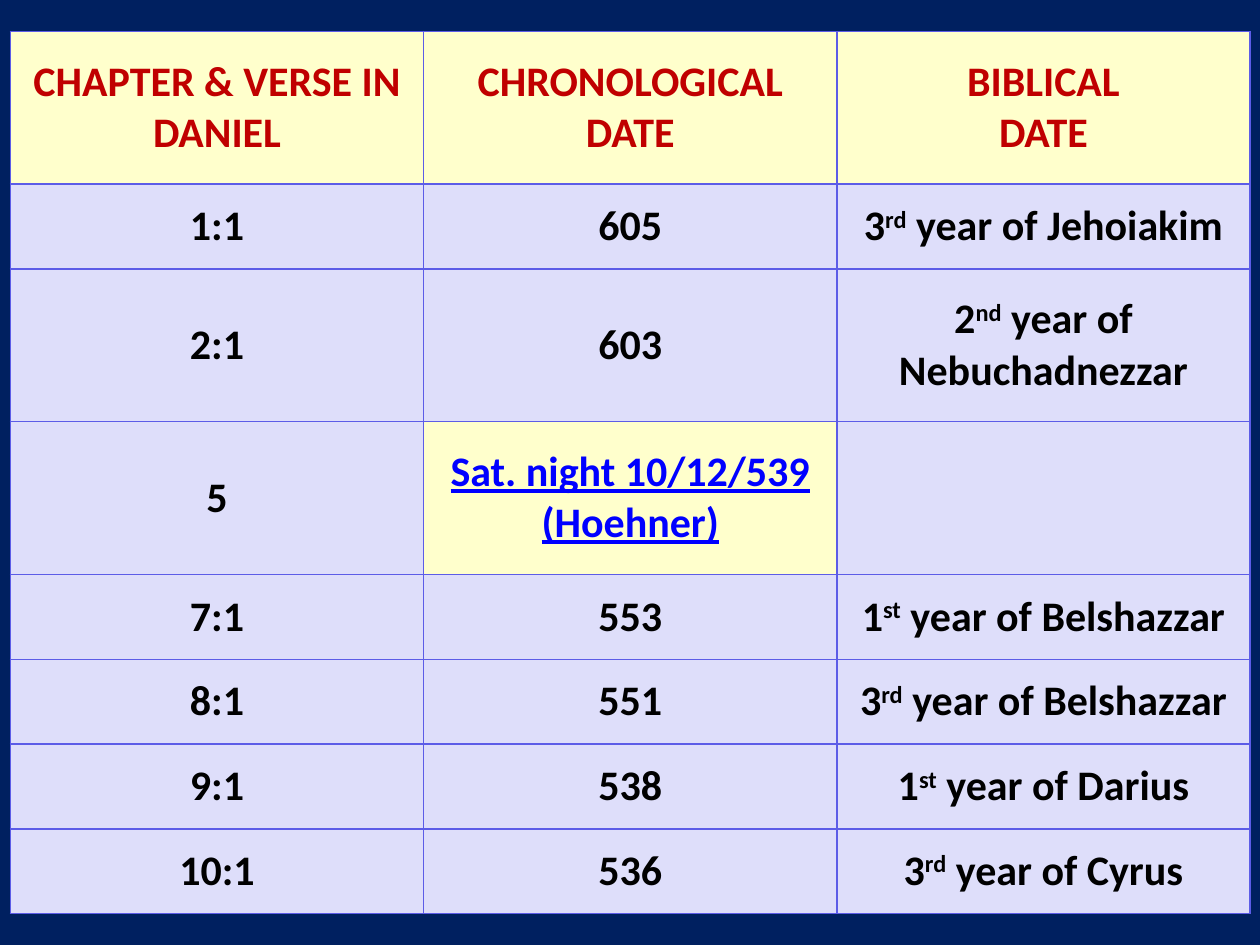
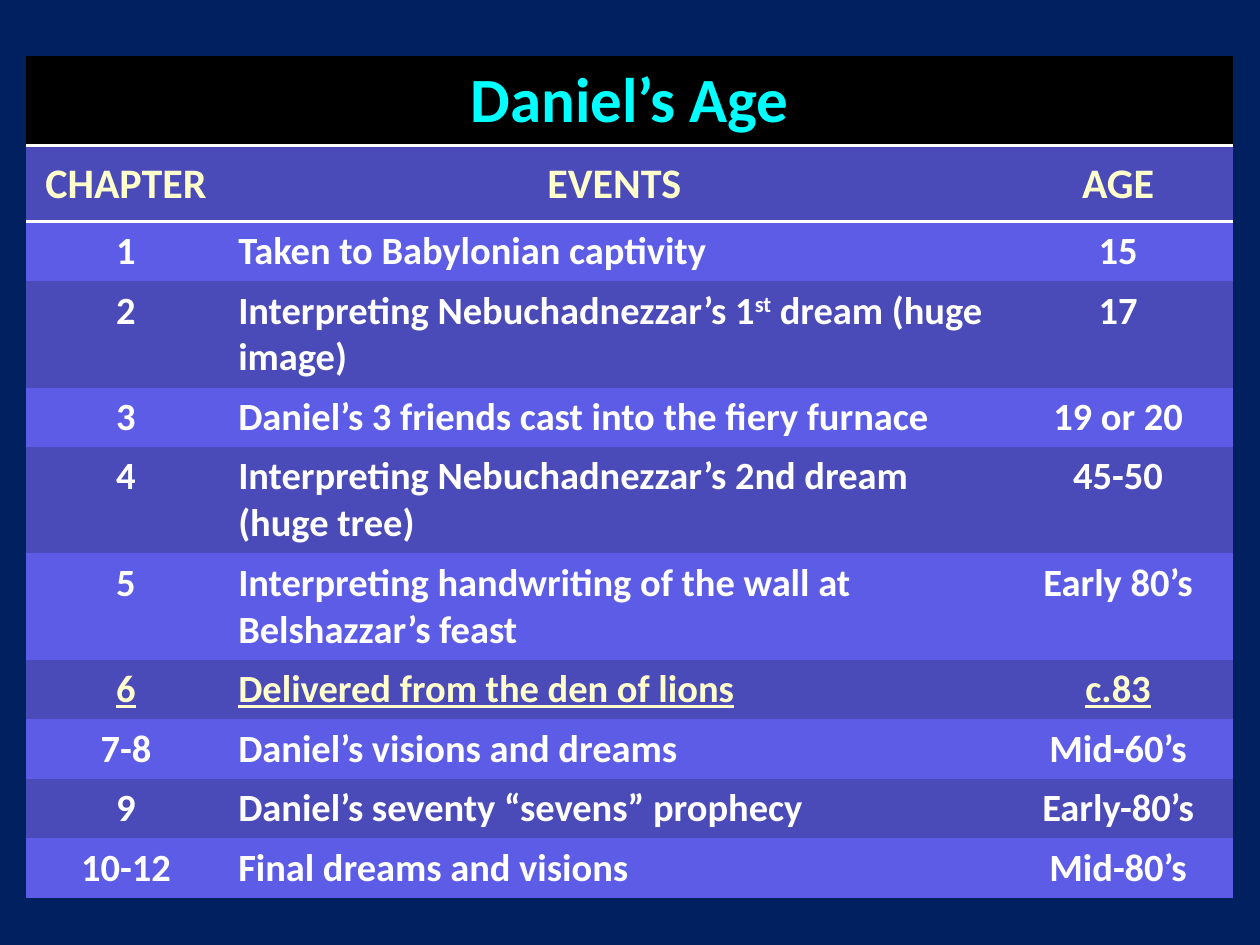
from lxml import etree
from pptx import Presentation
from pptx.dml.color import RGBColor
from pptx.enum import text
from pptx.oxml import ns
from pptx.util import Cm, Pt

HUES = {
    "navy": "002060", "cream": "FFFFCC", "red": "C00000", "pale": "DEDEFA",
    "violet": "5C5CE7", "indigo": "4A4AB9", "blue": "0000FF",
    "cyan": "00FFFF", "black": "000000", "white": "FFFFFF",
}
FONT = "Calibri"
PLAIN = "{2D5ABB26-0587-4C30-8999-92F81FD0307C}"
MID = text.MSO_ANCHOR.MIDDLE
TOP = text.MSO_ANCHOR.TOP

DATES = [
    ("1:1", "605", "3^rd^ year of Jehoiakim"),
    ("2:1", "603", "2^nd^ year of Nebuchadnezzar"),
    ("5", "Sat. night 10/12/539 (Hoehner)", ""),
    ("7:1", "553", "1^st^ year of Belshazzar"),
    ("8:1", "551", "3^rd^ year of Belshazzar"),
    ("9:1", "538", "1^st^ year of Darius"),
    ("10:1", "536", "3^rd^ year of Cyrus"),
]
AGES = [
    ("1", "Taken to Babylonian captivity", "15"),
    ("2", "Interpreting Nebuchadnezzar’s 1^st^ dream (huge image)", "17"),
    ("3", "Daniel’s 3 friends cast into the fiery furnace", "19 or 20"),
    ("4", "Interpreting Nebuchadnezzar’s 2nd dream (huge tree)", "45-50"),
    ("5", "Interpreting handwriting of the wall at Belshazzar’s feast", "Early 80’s"),
    ("6", "Delivered from the den of lions", "c.83"),
    ("7-8", "Daniel’s visions and dreams", "Mid-60’s"),
    ("9", "Daniel’s seventy “sevens” prophecy", "Early-80’s"),
    ("10-12", "Final dreams and visions", "Mid-80’s"),
]


def hue(name):
    return RGBColor.from_string(HUES[name])


def add_page(deck):
    page = deck.slides.add_slide(deck.slide_layouts[6])
    fill = page.background.fill
    fill.solid()
    fill.fore_color.rgb = hue("navy")
    return page


def add_grid(page, left, top, cols, rows):
    frame = page.shapes.add_table(len(rows), len(cols), Cm(left), Cm(top),
                                  Cm(sum(cols)), Cm(sum(rows)))
    grid = frame.table
    grid.first_row = grid.horz_banding = False
    grid._tbl.tblPr.find(ns.qn("a:tableStyleId")).text = PLAIN
    for col, width in zip(grid.columns, cols):
        col.width = Cm(width)
    for row, height in zip(grid.rows, rows):
        row.height = Cm(height)
    return grid


def fill_cell(cell, words, back, ink, size, anchor=TOP, center=True,
              under=False, before=0):
    cell.fill.solid()
    cell.fill.fore_color.rgb = hue(back)
    cell.vertical_anchor = anchor
    frame = cell.text_frame
    for i, line in enumerate(words.split("\n")):
        para = frame.add_paragraph() if i else frame.paragraphs[0]
        para.alignment = text.PP_ALIGN.CENTER if center else text.PP_ALIGN.LEFT
        para.space_before = Pt(before)
        para.font.size = Pt(size)
        for j, part in enumerate(line.split("^")):
            if part:
                add_run(para, part, ink, size, under, raised=j % 2)


def add_run(para, words, ink, size, under, raised):
    run = para.add_run()
    run.text = words
    font = run.font
    font.name, font.size, font.bold = FONT, Pt(size), True
    font.underline = under
    font.color.rgb = hue(ink)
    if raised:
        run._r.get_or_add_rPr().set("baseline", "30000")


def edge_cell(cell, sides, color, width):
    props = cell._tc.get_or_add_tcPr()
    for i, side in enumerate(sides):
        line = etree.Element(ns.qn(f"a:ln{side}"), w=str(Pt(width)))
        fill = etree.SubElement(line, ns.qn("a:solidFill"))
        etree.SubElement(fill, ns.qn("a:srgbClr"), val=HUES[color])
        props.insert(i, line)


def draw_dates(page, left, top):
    tall, low = 3.08, 1.71
    rows = [tall, low, tall, tall] + [low] * 4
    grid = add_grid(page, left, top, [8.33] * 3, rows)
    heads = ("CHAPTER & VERSE IN DANIEL", "CHRONOLOGICAL DATE", "BIBLICAL\nDATE")
    for c, head in enumerate(heads):
        fill_cell(grid.cell(0, c), head, "cream", "red", 24, MID)
    for r, row in enumerate(DATES, 1):
        for c, words in enumerate(row):
            key = words.startswith("Sat.")
            fill_cell(grid.cell(r, c), words, "cream" if key else "pale",
                      "blue" if key else "black", 24, MID,
                      under=key, before=4.8)
    for cell in grid.iter_cells():
        edge_cell(cell, "LRTB", "violet", 1)


def draw_ages(page, left, top):
    one, two = 1.2, 2.14
    rows = [1.8, 1.53, one, two, one, two, two] + [one] * 4
    grid = add_grid(page, left, top, [4.02, 15.67, 4.64], rows)
    grid.cell(0, 0).merge(grid.cell(0, 2))
    fill_cell(grid.cell(0, 0), "Daniel’s Age", "black", "cyan", 36)
    for c, head in enumerate(("CHAPTER", "EVENTS", "AGE")):
        fill_cell(grid.cell(1, c), head, "indigo", "cream", 24, MID)
        edge_cell(grid.cell(0, c), "B", "white", 2)
        edge_cell(grid.cell(1, c), "T", "white", 2)
    for r, row in enumerate(AGES, 2):
        key = row[0] == "6"
        for c, words in enumerate(row):
            fill_cell(grid.cell(r, c), words, "indigo" if r % 2 else "violet",
                      "cream" if key else "white", 22,
                      center=c != 1, under=key)


def main():
    deck = Presentation()
    deck.slide_width, deck.slide_height = Cm(25.4), Cm(19.05)
    draw_dates(add_page(deck), 0.21, 0.63)
    draw_ages(add_page(deck), 0.53, 1.13)
    deck.save("out.pptx")


if __name__ == "__main__":
    main()
